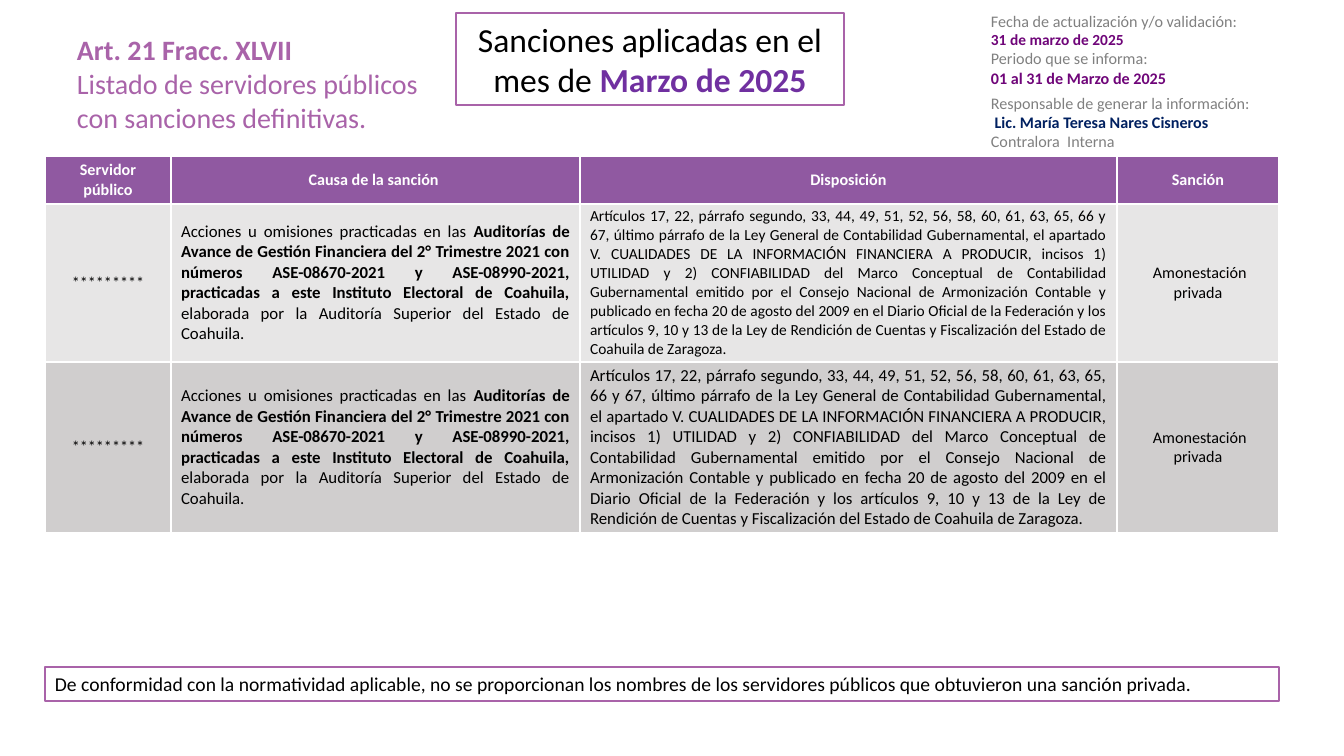
from pptx import Presentation
from pptx.dml.color import RGBColor
from pptx.enum.shapes import MSO_SHAPE
from pptx.enum.text import MSO_ANCHOR as ANCHOR, PP_ALIGN as ALIGN
from pptx.util import Emu, Pt

PURPLE, HEADER, GRAY, PLUM, NAVY = "A963A9", "9059A1", "808080", "6F0579", "002060"
WHITE, BLACK, VIOLET = "FFFFFF", "000000", "7030A0"


def px(n):
    """Convert slide pixels (100.8 per inch) to EMU."""
    return Emu(round(n * 914400 / 100.8))


def write(tf, paragraphs, align=ALIGN.LEFT, anchor=ANCHOR.TOP):
    """Fill a text frame; each paragraph is a list of (text, size, color, bold)."""
    tf.word_wrap = True
    tf.vertical_anchor = anchor
    for i, runs in enumerate(paragraphs):
        p = tf.add_paragraph() if i else tf.paragraphs[0]
        p.alignment = align
        for text, size, color, bold in runs:
            r = p.add_run()
            r.text = text
            r.font.name = "Calibri"
            r.font.size = Pt(size)
            r.font.bold = bold
            r.font.color.rgb = RGBColor.from_string(color)


prs = Presentation()
prs.slide_width, prs.slide_height = px(1344), px(756)
s = prs.slides.add_slide(prs.slide_layouts[5])

# Title and footnote, both framed in purple
title = s.shapes.title
title.left, title.top, title.width, title.height = px(456), px(13), px(388), px(92)
write(title.text_frame, [[("Sanciones aplicadas en el mes de ", 24, BLACK, False),
                          ("Marzo de 2025", 24, VIOLET, True)]], ALIGN.CENTER, ANCHOR.MIDDLE)
note = s.shapes.add_shape(MSO_SHAPE.RECTANGLE, px(45), px(667), px(1234), px(34))
note.shadow.inherit = False
write(note.text_frame, [[(
    "De conformidad con la normatividad aplicable, no se proporcionan los nombres de los "
    "servidores públicos que obtuvieron una sanción privada.", 14, BLACK, False)]],
    anchor=ANCHOR.MIDDLE)
for box in (title, note):
    box.fill.solid()
    box.fill.fore_color.rgb = RGBColor.from_string(WHITE)
    box.line.color.rgb = RGBColor.from_string(PURPLE)
    box.line.width = Pt(1)

# Text blocks in the top corners
text_blocks = [
    (67, 28, 388, 146, [
        [("Art. 21 Fracc. XLVII", 20, PURPLE, True)],
        [("Listado de servidores públicos con sanciones definitivas.", 20, PURPLE, False)]]),
    (981, 6, 273, 86, [
        [("Fecha de actualización y/o validación:", 11.5, GRAY, False)],
        [("31 de marzo de 2025", 11, PLUM, True)],
        [("Periodo que se informa:", 11.5, GRAY, False)],
        [("01 al 31 de Marzo de 2025", 11.5, PLUM, True)]]),
    (981, 88, 298, 68, [
        [("Responsable de generar la información:", 11.5, GRAY, False)],
        [(" Lic. María Teresa Nares Cisneros", 11.5, NAVY, True)],
        [("Contralora  Interna", 11.5, GRAY, False)]]),
]
for left, top, width, height, paragraphs in text_blocks:
    tb = s.shapes.add_textbox(px(left), px(top), px(width), px(height))
    write(tb.text_frame, paragraphs)

# Sanctions table
cause = [
    ("Acciones u omisiones practicadas en las ", 12, BLACK, False),
    ("Auditorías de Avance de Gestión Financiera del 2° Trimestre 2021 con números "
     "ASE-08670-2021 y ASE-08990-2021, practicadas a este Instituto Electoral de Coahuila, ",
     12, BLACK, True),
    ("elaborada por la Auditoría Superior del Estado de Coahuila.", 12, BLACK, False)]
provision = (
    "Artículos 17, 22, párrafo segundo, 33, 44, 49, 51, 52, 56, 58, 60, 61, 63, 65, 66 y 67, "
    "último párrafo de la Ley General de Contabilidad Gubernamental, el apartado V. CUALIDADES "
    "DE LA INFORMACIÓN FINANCIERA A PRODUCIR, incisos 1) UTILIDAD y 2) CONFIABILIDAD del Marco "
    "Conceptual de Contabilidad Gubernamental emitido por el Consejo Nacional de Armonización "
    "Contable y publicado en fecha 20 de agosto del 2009 en el Diario Oficial de la Federación "
    "y los artículos 9, 10 y 13 de la Ley de Rendición de Cuentas y Fiscalización del Estado "
    "de Coahuila de Zaragoza.")
headings = ["Servidor público", "Causa de la sanción ", "Disposición", "Sanción"]
rows = [(48, HEADER, [[(h, 11.5, WHITE, True)] for h in headings])]
for height, fill, size in [(158, "E7E6E6", 11), (171, "D0CECE", 12)]:
    rows.append((height, fill, [
        [("*********", 11.5, BLACK, False)],
        cause,
        [(provision, size, BLACK, False)],
        [(" Amonestación privada", 11.5, BLACK, False)]]))

table = s.shapes.add_table(3, 4, px(45), px(156), px(1234), px(377)).table
for column, width in zip(table.columns, [126, 409, 537, 162]):
    column.width = px(width)
for i, (height, fill, cells) in enumerate(rows):
    table.rows[i].height = px(height)
    for j, runs in enumerate(cells):
        cell = table.cell(i, j)
        cell.fill.solid()
        cell.fill.fore_color.rgb = RGBColor.from_string(fill)
        cell.margin_top = cell.margin_bottom = px(3)
        cell.vertical_anchor = ANCHOR.MIDDLE
        justified = i > 0 and j in (1, 2)
        write(cell.text_frame, [runs], ALIGN.JUSTIFY if justified else ALIGN.CENTER,
              ANCHOR.MIDDLE)

prs.save("out.pptx")
